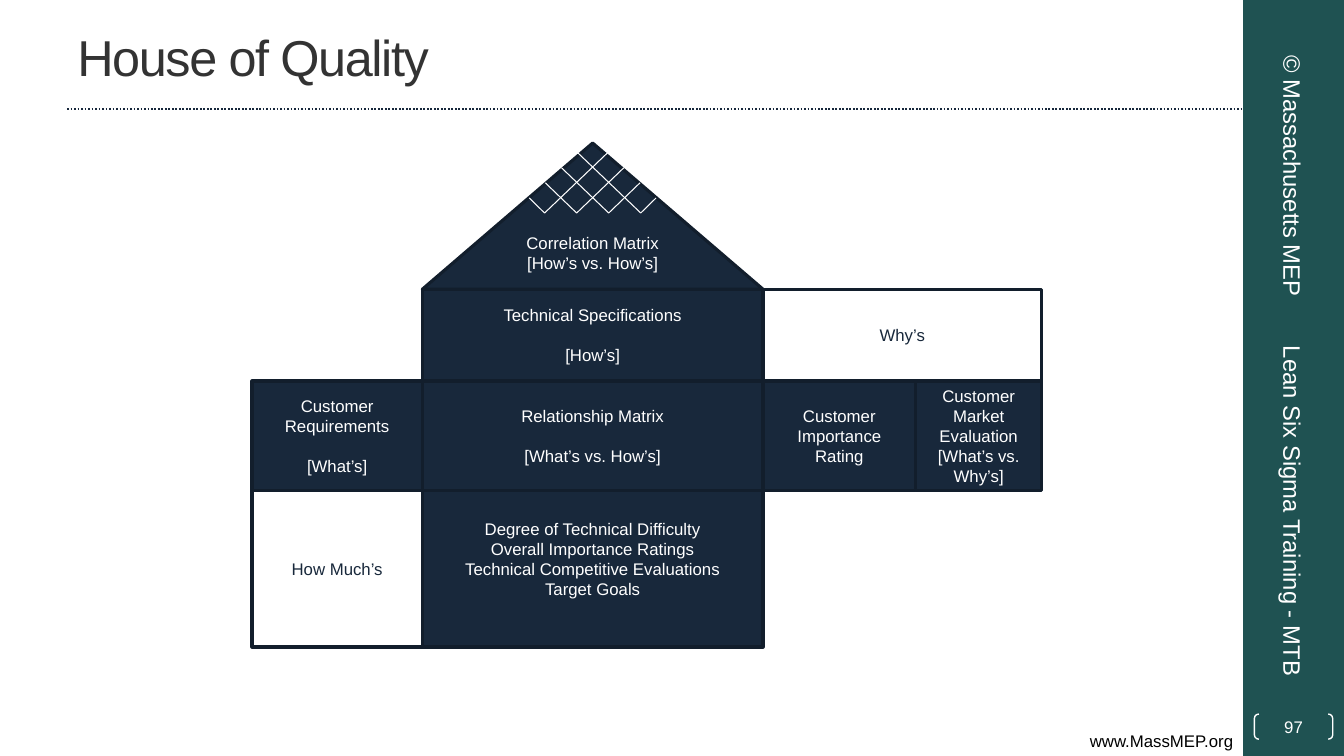
from collections import namedtuple

from lxml.etree import SubElement
from pptx import Presentation
from pptx.dml.color import RGBColor
from pptx.enum.dml import MSO_LINE
from pptx.enum.shapes import MSO_CONNECTOR, MSO_SHAPE
from pptx.enum.text import MSO_ANCHOR, MSO_AUTO_SIZE, PP_ALIGN
from pptx.oxml.ns import qn
from pptx.util import Pt

Box = namedtuple("Box", "left top width height")

WHITE = RGBColor(0xFF, 0xFF, 0xFF)
BLACK = RGBColor(0x00, 0x00, 0x00)
CHARCOAL = RGBColor(0x33, 0x33, 0x33)
TEAL = RGBColor(0x1F, 0x52, 0x52)
RULE = RGBColor(0x17, 0x27, 0x3B)
NAVY = RGBColor(0x18, 0x28, 0x3B)
OUTLINE = RGBColor(0x12, 0x1E, 0x2C)

FONT = "Arial"
LINE_PITCH = 14.4


def in_points(*lengths):
    """Turn plain numbers into point lengths."""
    return [Pt(length) for length in lengths]


def add_span(para, text, size, color):
    """Add one formatted run to a paragraph."""
    span = para.add_run()
    span.text = text
    span.font.name = FONT
    span.font.size = Pt(size)
    span.font.color.rgb = color
    return span


def add_label(page, box, text, size, color, align, rotation=0):
    """Place a single line of text in a box."""
    label = page.shapes.add_textbox(*in_points(*box))
    label.rotation = rotation
    frame = label.text_frame
    frame.word_wrap = True
    frame.vertical_anchor = MSO_ANCHOR.MIDDLE
    frame.paragraphs[0].alignment = align
    add_span(frame.paragraphs[0], text, size, color)


def add_line(page, start, end, color, width):
    """Draw a straight line without a shadow."""
    line = page.shapes.add_connector(MSO_CONNECTOR.STRAIGHT, *in_points(*start, *end))
    line.line.color.rgb = color
    line.line.width = Pt(width)
    SubElement(line._element.spPr, qn("a:effectLst"))
    return line


def add_header(page, box):
    """Set the title and the dotted rule along the foot of the box."""
    title = page.shapes.title
    title.left, title.top, title.width, title.height = in_points(
        box.left, box.top, 800, box.height)
    frame = title.text_frame
    frame.auto_size = MSO_AUTO_SIZE.NONE
    frame.word_wrap = True
    frame.vertical_anchor = MSO_ANCHOR.MIDDLE
    frame.paragraphs[0].alignment = PP_ALIGN.LEFT
    span = add_span(frame.paragraphs[0], "House of Quality", 36, CHARCOAL)
    span.font._element.set("spc", "-100")
    bottom = box.top + box.height
    rule = add_line(page, (box.left, bottom), (box.left + box.width, bottom), RULE, 1.25)
    rule.line.dash_style = MSO_LINE.ROUND_DOT


def add_side_band(page, box):
    """Draw the coloured band with its turned text and page number."""
    band = page.shapes.add_shape(MSO_SHAPE.RECTANGLE, *in_points(*box))
    band.shadow.inherit = False
    band.fill.solid()
    band.fill.fore_color.rgb = TEAL
    band.line.fill.background()

    center = box.left + box.width / 2 - 0.5
    for text, middle, length, align in (
        ("© Massachusetts MEP", 125.6, 228, PP_ALIGN.CENTER),
        ("Lean Six Sigma Training - MTB", 371.9, 264, PP_ALIGN.LEFT),
    ):
        turned = Box(center - length / 2, box.top + middle - 19, length, 38)
        add_label(page, turned, text, 17, WHITE, align, rotation=90)

    number = page.shapes.add_shape(
        MSO_SHAPE.DOUBLE_BRACKET, *in_points(box.left + 8, box.top + 510, 56, 18))
    number.shadow.inherit = False
    number.adjustments[0] = 0.18
    number.fill.background()
    number.line.color.rgb = WHITE
    number.line.width = Pt(1)
    frame = number.text_frame
    frame.margin_left = frame.margin_right = frame.margin_top = frame.margin_bottom = 0
    frame.vertical_anchor = MSO_ANCHOR.MIDDLE
    frame.paragraphs[0].alignment = PP_ALIGN.CENTER
    add_span(frame.paragraphs[0], "97", 12, WHITE)


def add_room(page, box, lines, kind=MSO_SHAPE.RECTANGLE, fill=NAVY, gap=0, below=0):
    """Draw one part of the house with its centred lines."""
    room = page.shapes.add_shape(kind, *in_points(*box))
    room.shadow.inherit = False
    room.fill.solid()
    room.fill.fore_color.rgb = fill
    room.line.color.rgb = OUTLINE
    room.line.width = Pt(2.25)
    frame = room.text_frame
    frame.word_wrap = True
    frame.vertical_anchor = MSO_ANCHOR.MIDDLE
    frame.margin_bottom = Pt(3.6 + below)
    for index, text in enumerate(lines):
        para = frame.add_paragraph() if index else frame.paragraphs[0]
        para.alignment = PP_ALIGN.CENTER
        para.line_spacing = Pt(LINE_PITCH)
        if index:
            para.space_before = Pt(gap)
        add_span(para, text, 12, NAVY if fill == WHITE else WHITE)


def add_roof_lattice(page, box):
    """Cross four rising and four falling lines below the roof peak."""
    peak = box.left + box.width / 2
    foot = box.top + 50
    for step in range(4):
        low = -34.4 + 22.9 * step
        high = 10.8 + 11.5 * step
        top = box.top + 6.8 + 10.8 * step
        for side in (1, -1):
            add_line(page, (peak + side * low, foot), (peak + side * high, top), WHITE, 0.75)


def add_house(page, box):
    """Lay out the rooms of the house on a grid of columns and rows."""
    columns = [box.left + offset for offset in (0, 121.7, 365, 474.2, 564)]
    rows = [box.top + offset for offset in (0, 104.4, 170, 248.4, 360)]

    def cell(column, row, span=1):
        """Return the box of a grid cell that may span columns."""
        return Box(columns[column], rows[row],
                   columns[column + span] - columns[column], rows[row + 1] - rows[row])

    roof = cell(1, 0)
    add_room(page, roof, ["Correlation Matrix [How’s vs. How’s]"],
             kind=MSO_SHAPE.ISOSCELES_TRIANGLE)
    add_room(page, cell(1, 1), ["Technical Specifications", "[How’s]"], gap=LINE_PITCH)
    add_room(page, cell(1, 2), ["Relationship Matrix", "[What’s vs. How’s]"], gap=LINE_PITCH)
    add_room(page, cell(1, 3), [
        "Degree of Technical Difficulty",
        "Overall Importance Ratings",
        "Technical Competitive Evaluations",
        "Target Goals",
    ], below=LINE_PITCH)
    add_room(page, cell(0, 2), ["Customer Requirements", "[What’s]"], gap=LINE_PITCH)
    add_room(page, cell(0, 3), ["How Much’s"], fill=WHITE)
    add_room(page, cell(2, 1, span=2), ["Why’s"], fill=WHITE)
    add_room(page, cell(2, 2), ["Customer Importance Rating"])
    add_room(page, cell(3, 2), ["Customer Market Evaluation", "[What’s vs. Why’s]"])
    add_roof_lattice(page, roof)


def main():
    """Build the slide and save the deck."""
    deck = Presentation()
    deck.slide_width, deck.slide_height = in_points(960, 540)
    page = deck.slides.add_slide(deck.slide_layouts[5])
    add_side_band(page, Box(888, 0, 72, 540))
    add_header(page, Box(48, 2, 840, 75.8))
    add_label(page, Box(0, 518.4, 888, 21.6), "www.MassMEP.org", 12, BLACK, PP_ALIGN.RIGHT)
    add_house(page, Box(180, 102.2, 564, 360))
    deck.save("out.pptx")


if __name__ == "__main__":
    main()
